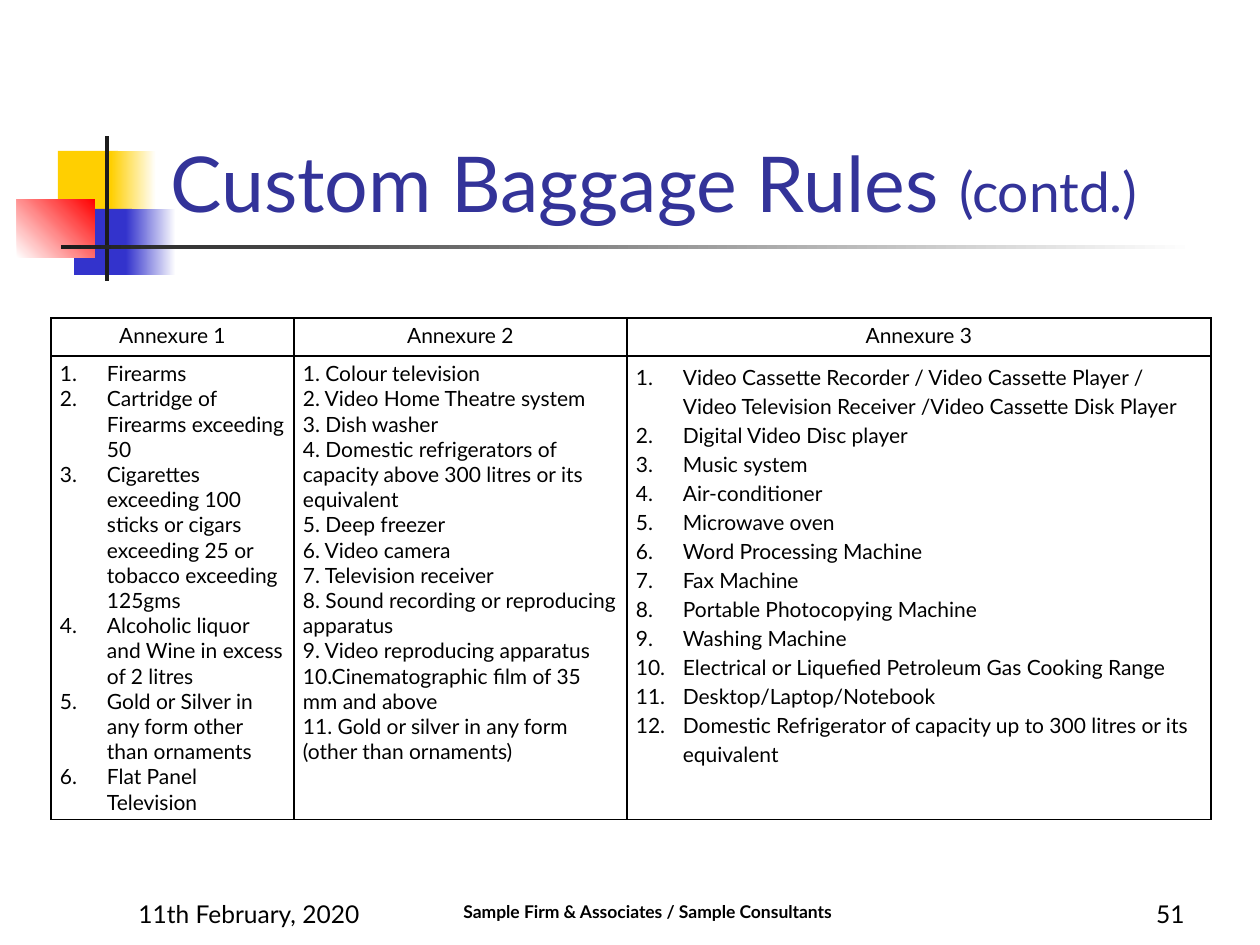
from dataclasses import dataclass
from typing import Optional

from lxml import etree
from pptx import Presentation
from pptx import util as u
from pptx.dml import color
from pptx.enum import shapes, text
from pptx.oxml import ns

FONT = "Lato"
EMU_PER_PX = 914400 / 126
COLORS = {
    "yellow": "FFCF01", "blue": "3333CC", "red": "FF0000", "ink": "1C1C1C",
    "white": "FFFFFF", "title": "333399", "black": "000000",
}


@dataclass(frozen=True)
class Block:
    left: int
    top: int
    width: int
    height: int
    start: str
    end: Optional[str] = None
    angle: int = 0


@dataclass(frozen=True)
class Label:
    left: int
    top: int
    width: int
    height: int
    runs: tuple
    color: str = "black"
    bold: bool = False
    align: text.PP_ALIGN = text.PP_ALIGN.LEFT
    anchor: text.MSO_ANCHOR = text.MSO_ANCHOR.BOTTOM


@dataclass(frozen=True)
class Annexure:
    heading: str
    width: int
    items: tuple
    numbered: bool = True
    line_spacing: Optional[float] = None
    space_after: int = 0


BLOCKS = (
    Block(58, 151, 60, 66, "yellow"),
    Block(111, 151, 45, 66, "yellow", "white"),
    Block(74, 209, 58, 66, "blue"),
    Block(126, 209, 50, 66, "blue", "white"),
    Block(17, 199, 78, 59, "white", "red", 45),
    Block(105, 136, 4, 145, "ink"),
    Block(61, 245, 1134, 4, "ink", "white"),
)

LABELS = (
    Label(158, 116, 1074, 118, (("Custom Baggage Rules ", 44), ("(contd.)", 31.5)), "title"),
    Label(935, 872, 262, 63, (("51", 14),), align=text.PP_ALIGN.RIGHT),
    Label(126, 872, 262, 63, (("11th February, 2020", 14),)),
    Label(451, 895, 630, 34, (("Sample Firm & Associates / Sample Consultants", 10),),
          bold=True, anchor=text.MSO_ANCHOR.TOP),
)

ANNEXURES = (
    Annexure("Annexure 1", 243, (
        "Firearms",
        "Cartridge of Firearms exceeding 50",
        "Cigarettes exceeding 100 sticks or cigars exceeding 25 or tobacco exceeding 125gms",
        "Alcoholic liquor and Wine in excess of 2 litres",
        "Gold or Silver in any form other than ornaments",
        "Flat Panel Television",
    )),
    Annexure("Annexure 2", 333, (
        "1. Colour television",
        "2. Video Home Theatre system",
        "3. Dish washer",
        "4. Domestic refrigerators of capacity above 300 litres or its equivalent",
        "5. Deep freezer",
        "6. Video camera",
        "7. Television receiver",
        "8. Sound recording or reproducing apparatus",
        "9. Video reproducing apparatus",
        "10.Cinematographic film of 35 mm and above",
        "11. Gold or silver in any form (other than ornaments)",
    ), numbered=False),
    Annexure("Annexure 3", 584, (
        "Video Cassette Recorder / Video Cassette Player / "
        "Video Television Receiver /Video Cassette Disk Player",
        "Digital Video Disc player",
        "Music system",
        "Air-conditioner",
        "Microwave oven",
        "Word Processing Machine",
        "Fax Machine",
        "Portable Photocopying Machine",
        "Washing Machine",
        "Electrical or Liquefied Petroleum Gas Cooking Range",
        "Desktop/Laptop/Notebook",
        "Domestic Refrigerator of capacity up to 300 litres or its equivalent",
    ), line_spacing=1.15, space_after=10),
)
ROW_HEIGHTS = (38, 463)


def px(length: int) -> int:
    return round(length * EMU_PER_PX)


def rgb(name: str) -> color.RGBColor:
    return color.RGBColor.from_string(COLORS[name])


def style_run(run, size: float, tint: str = "black", bold: bool = False) -> None:
    run.font.name = FONT
    run.font.size = u.Pt(size)
    run.font.bold = bold
    run.font.color.rgb = rgb(tint)


def draw_block(slide, block: Block) -> None:
    shape = slide.shapes.add_shape(
        shapes.MSO_SHAPE.RECTANGLE,
        px(block.left), px(block.top), px(block.width), px(block.height))
    shape.shadow.inherit = False
    shape.line.fill.background()
    if block.end is None:
        shape.fill.solid()
        shape.fill.fore_color.rgb = rgb(block.start)
        return
    shape.fill.gradient()
    shape.fill.gradient_angle = block.angle
    for stop, tint in zip(shape.fill.gradient_stops, (block.start, block.end)):
        stop.color.rgb = rgb(tint)


def draw_label(slide, label: Label) -> None:
    box = slide.shapes.add_textbox(
        px(label.left), px(label.top), px(label.width), px(label.height))
    frame = box.text_frame
    frame.word_wrap = True
    frame.vertical_anchor = label.anchor
    line = frame.paragraphs[0]
    line.alignment = label.align
    for wording, size in label.runs:
        run = line.add_run()
        run.text = wording
        style_run(run, size, label.color, label.bold)


def style_cell(cell) -> None:
    cell.margin_left = cell.margin_right = px(9)
    cell.margin_top = cell.margin_bottom = px(5)
    properties = cell._tc.get_or_add_tcPr()
    for side in ("a:lnL", "a:lnR", "a:lnT", "a:lnB"):
        border = etree.SubElement(properties, ns.qn(side), w=str(u.Pt(1)))
        paint = etree.SubElement(border, ns.qn("a:solidFill"))
        etree.SubElement(paint, ns.qn("a:srgbClr"), val=COLORS["black"])
    cell.fill.solid()
    cell.fill.fore_color.rgb = rgb("white")
    for line in cell.text_frame.paragraphs:
        for run in line.runs:
            style_run(run, 12)


def number_line(line) -> None:
    properties = line._p.get_or_add_pPr()
    properties.set("marL", str(px(47)))
    properties.set("indent", str(-px(47)))
    etree.SubElement(properties, ns.qn("a:buAutoNum"), type="arabicPeriod")


def draw_annexures(slide, left: int, top: int) -> None:
    width = sum(annexure.width for annexure in ANNEXURES)
    table = slide.shapes.add_table(
        len(ROW_HEIGHTS), len(ANNEXURES),
        px(left), px(top), px(width), px(sum(ROW_HEIGHTS))).table
    table.first_row = table.horz_banding = False
    for row, height in zip(table.rows, ROW_HEIGHTS):
        row.height = px(height)
    for index, annexure in enumerate(ANNEXURES):
        table.columns[index].width = px(annexure.width)
        heading, body = table.cell(0, index), table.cell(1, index)
        heading.text_frame.text = annexure.heading
        heading.text_frame.paragraphs[0].alignment = text.PP_ALIGN.CENTER
        body.text_frame.text = "\n".join(annexure.items)
        lines = body.text_frame.paragraphs
        for line in lines:
            line.line_spacing = annexure.line_spacing
            if annexure.numbered:
                number_line(line)
        lines[-1].space_after = u.Pt(annexure.space_after)
        style_cell(heading)
        style_cell(body)


def main() -> None:
    deck = Presentation()
    deck.slide_width, deck.slide_height = px(1260), px(945)
    slide = deck.slides.add_slide(deck.slide_layouts[6])
    for block in BLOCKS:
        draw_block(slide, block)
    for label in LABELS:
        draw_label(slide, label)
    draw_annexures(slide, 51, 318)
    deck.save("out.pptx")


if __name__ == "__main__":
    main()
